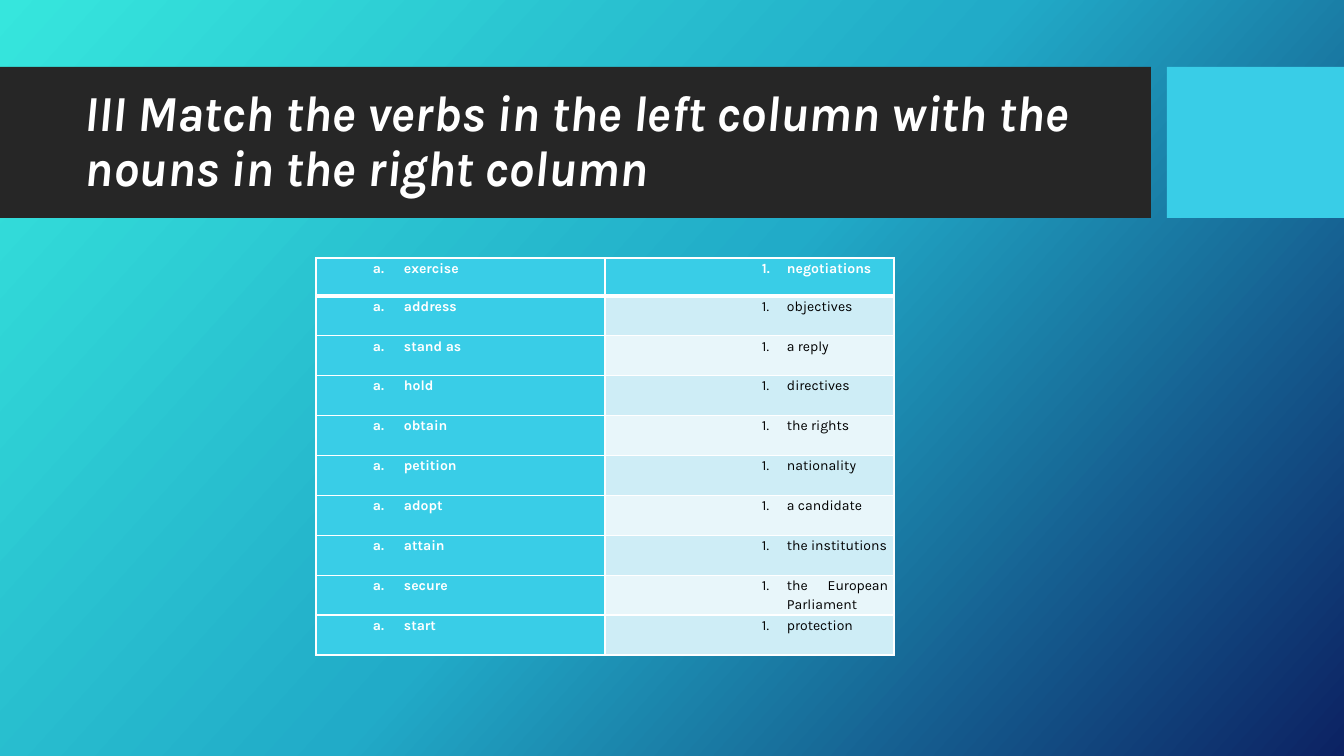
from lxml.etree import SubElement
from pptx import Presentation
from pptx.dml.color import RGBColor
from pptx.enum.shapes import MSO_SHAPE
from pptx.enum.text import MSO_ANCHOR, PP_ALIGN
from pptx.oxml import parse_xml
from pptx.oxml.ns import nsdecls, qn
from pptx.util import Pt

# Content
TITLE = "III Match the verbs in the left column with the nouns in the right column"
PAIRS = [
    ("exercise", "negotiations"),
    ("address", "objectives"),
    ("stand as", "a reply"),
    ("hold", "directives"),
    ("obtain", "the rights"),
    ("petition", "nationality"),
    ("adopt", "a candidate"),
    ("attain", "the institutions"),
    ("secure", "the European Parliament"),
    ("start", "protection"),
]

# Look
FONT = "Karla"
WHITE, BLACK, DARK, CYAN = "FFFFFF", "000000", "262626", "39CDE7"
BANDS = ("E8F6FA", "CEEDF6")
GRADIENT = [(0, "36E6DD"), (50, "21ABC8"), (100, "0C2263")]
GRADIENT_ANGLE = 42
BARS = [(0, 67, 1151, 151, DARK), (1167, 67, 177, 151, CYAN)]
TITLE_BOX = (75, 83, 1059, 119)
TABLE_BOX = (316, 258, 578, 397)
HEADER_HEIGHT = 38
# Per column: numbering, outline level, left margin, first-line indent
LISTS = [("alphaLcPeriod", 1, 82, -31), ("arabicPeriod", 3, 176, -25)]


def px(length):
    return round(length * 914400 / 100.8)


def color(value):
    return RGBColor.from_string(value)


def style_font(paragraph, size, value, bold, italic=False):
    font = paragraph.font
    font.name, font.size, font.bold, font.italic = FONT, Pt(size), bold, italic
    font.color.rgb = color(value)


def set_borders(cell, widths):
    properties = cell._tc.get_or_add_tcPr()
    for index, (side, width) in enumerate(widths.items()):
        properties.insert(index, parse_xml(
            f'<a:ln{side} {nsdecls("a")} w="{Pt(width)}"><a:solidFill>'
            f'<a:srgbClr val="{WHITE}"/></a:solidFill></a:ln{side}>'))


def fill_cell(cell, text, row, column):
    numbering, level, margin, indent = LISTS[column]
    accent = row == 0 or column == 0
    cell.fill.solid()
    cell.fill.fore_color.rgb = color(CYAN if accent else BANDS[row % 2])
    cell.margin_left = cell.margin_right = px(6)
    cell.margin_top = cell.margin_bottom = 0
    set_borders(cell, {"L": 1, "R": 1, "T": 3 if row == 1 else 1, "B": 3 if row == 0 else 1})
    paragraph = cell.text_frame.paragraphs[0]
    paragraph.text = text
    properties = paragraph._p.get_or_add_pPr()
    properties.set("marL", str(px(margin)))
    properties.set("indent", str(px(indent)))
    SubElement(properties, qn("a:buFont")).set("typeface", "+mj-lt")
    SubElement(properties, qn("a:buAutoNum")).set("type", numbering)
    paragraph.level = level
    paragraph.alignment = PP_ALIGN.JUSTIFY
    paragraph.line_spacing = 1.15
    style_font(paragraph, 10, WHITE if accent else BLACK, accent)


presentation = Presentation()
presentation.slide_width, presentation.slide_height = px(1344), px(756)
slide = presentation.slides.add_slide(presentation.slide_layouts[6])

# Gradient background
stops = "".join(f'<a:gs pos="{position * 1000}"><a:srgbClr val="{value}"/></a:gs>'
                for position, value in GRADIENT)
slide.element.cSld.insert(0, parse_xml(
    f'<p:bg {nsdecls("p", "a")}><p:bgPr><a:gradFill rotWithShape="1"><a:gsLst>{stops}</a:gsLst>'
    f'<a:lin ang="{GRADIENT_ANGLE * 60000}" scaled="0"/></a:gradFill><a:effectLst/></p:bgPr></p:bg>'))

# Title bars
for *box, value in BARS:
    bar = slide.shapes.add_shape(MSO_SHAPE.RECTANGLE, *map(px, box))
    bar.shadow.inherit = False
    bar.fill.solid()
    bar.fill.fore_color.rgb = color(value)
    bar.line.fill.background()

# Title
title = slide.shapes.add_textbox(*map(px, TITLE_BOX))
frame = title.text_frame
frame.word_wrap = True
frame.vertical_anchor = MSO_ANCHOR.MIDDLE
paragraph = frame.paragraphs[0]
paragraph.text = TITLE
paragraph.line_spacing = 0.9
style_font(paragraph, 36, WHITE, True, True)

# Table of verbs and nouns
table = slide.shapes.add_table(len(PAIRS), 2, *map(px, TABLE_BOX)).table
body_height = (TABLE_BOX[3] - HEADER_HEIGHT) / (len(PAIRS) - 1)
for row, pair in enumerate(PAIRS):
    table.rows[row].height = px(body_height if row else HEADER_HEIGHT)
    for column, text in enumerate(pair):
        fill_cell(table.cell(row, column), text, row, column)

presentation.save("out.pptx")
